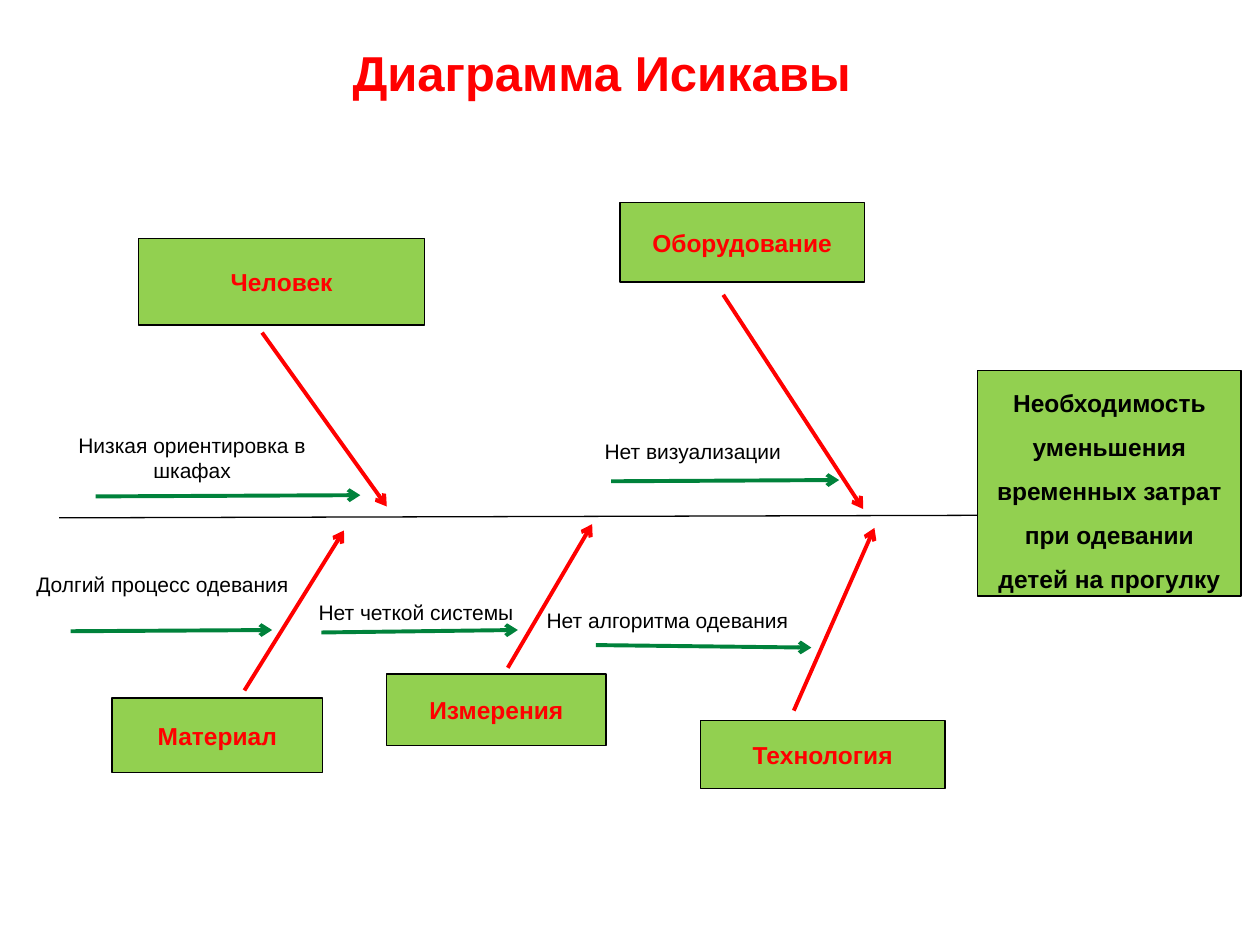
from lxml.etree import SubElement
from pptx import Presentation
from pptx.dml.color import RGBColor
from pptx.enum.shapes import MSO_CONNECTOR as Connector, MSO_SHAPE as Shape
from pptx.enum.text import MSO_ANCHOR as Anchor, PP_ALIGN as Align
from pptx.oxml.ns import qn
from pptx.util import Inches, Pt

COLORS = {"red": "FF0000", "box": "92D050", "twig": "00823B", "black": "000000"}

BONES = [
    dict(category="Человек", reason="Низкая ориентировка в шкафах",
         box=(1.1, 1.89, 2.27, 0.69), reason_box=(-0.6, 1.49, 2.05, 0.5),
         rib=((0.98, 0.75), (1.97, 2.13)), twig=((-0.34, 2.05), (1.76, 2.04)),
         align=Align.CENTER),
    dict(category="Оборудование", reason="Нет визуализации",
         box=(4.92, 1.61, 1.94, 0.63), reason_box=(-0.22, 1.82, 1.74, 0.3),
         rib=((0.82, 0.73), (1.93, 2.43)), twig=((-0.07, 2.21), (1.74, 2.2))),
    dict(category="Материал", reason="Долгий процесс одевания",
         box=(0.89, 5.54, 1.67, 0.59), reason_box=(-0.7, -1.05, 2.4, 0.3),
         rib=((1.05, -0.06), (1.84, -1.33)), twig=((-0.33, -0.53), (1.27, -0.54))),
    dict(category="Измерения", reason="Нет четкой системы",
         box=(3.07, 5.35, 1.74, 0.57), reason_box=(-0.64, -0.64, 2.07, 0.3),
         rib=((0.96, -0.05), (1.63, -1.19)), twig=((-0.52, -0.33), (1.04, -0.35))),
    dict(category="Технология", reason="Нет алгоритма одевания",
         box=(5.56, 5.72, 1.94, 0.54), reason_box=(-1.32, -0.95, 2.27, 0.3),
         rib=((0.74, -0.08), (1.38, -1.53)), twig=((-0.83, -0.6), (0.88, -0.58))),
]


def color(name):
    return RGBColor.from_string(COLORS[name])


def write(frame, text, size=12, ink="black", bold=False, align=Align.LEFT,
          anchor=Anchor.TOP, spacing=None, wrap=True):
    frame.word_wrap = wrap
    frame.vertical_anchor = anchor
    paragraph = frame.paragraphs[0]
    paragraph.alignment = align
    if spacing:
        paragraph.line_spacing = spacing
    run = paragraph.add_run()
    run.text = text
    run.font.name = "Arial"
    run.font.size = Pt(size)
    run.font.bold = bold
    run.font.color.rgb = color(ink)


def add_label(slide, box, text, **style):
    label = slide.shapes.add_textbox(*map(Inches, box))
    write(label.text_frame, text, **style)


def add_box(slide, box, text, **style):
    panel = slide.shapes.add_shape(Shape.RECTANGLE, *map(Inches, box))
    panel.shadow.inherit = False
    panel.fill.solid()
    panel.fill.fore_color.rgb = color("box")
    panel.line.color.rgb = color("black")
    panel.line.width = Pt(0.75)
    write(panel.text_frame, text, size=14, bold=True, align=Align.CENTER,
          anchor=Anchor.MIDDLE, **style)


def add_line(slide, start, end, ink, width=2.25, arrow=True):
    line = slide.shapes.add_connector(Connector.STRAIGHT, *map(Inches, (*start, *end)))
    line.line.color.rgb = color(ink)
    line.line.width = Pt(width)
    if arrow:
        SubElement(line.line._get_or_add_ln(), qn("a:tailEnd"), type="arrow")
    SubElement(line._element.spPr, qn("a:effectLst"))


def add_title(slide, box):
    add_label(slide, box, "Диаграмма Исикавы", size=28, ink="red", bold=True,
              align=Align.CENTER, wrap=False)


def add_head_and_spine(slide, box):
    left, top = box[:2]
    add_box(slide, box,
            "Необходимость уменьшения временных затрат при одевании детей на прогулку",
            spacing=1.5)
    add_line(slide, (left, top + 1.15), (left - 7.29, top + 1.17), "black",
             width=0.75, arrow=False)


def add_bone(slide, box, category, reason, reason_box, rib, twig, align=Align.LEFT):
    left, top = box[:2]

    def shift(point):
        return left + point[0], top + point[1]

    add_box(slide, box, category, ink="red")
    add_line(slide, *map(shift, rib), "red")
    add_line(slide, *map(shift, twig), "twig")
    add_label(slide, (*shift(reason_box), *reason_box[2:]), reason, align=align)


def main():
    deck = Presentation()
    deck.slide_width, deck.slide_height = Inches(10), Inches(7.5)
    slide = deck.slides.add_slide(deck.slide_layouts[6])
    add_title(slide, (2.67, 0.29, 4.21, 0.57))
    add_head_and_spine(slide, (7.76, 2.94, 2.09, 1.79))
    for bone in BONES:
        add_bone(slide, **bone)
    deck.save("out.pptx")


if __name__ == "__main__":
    main()
